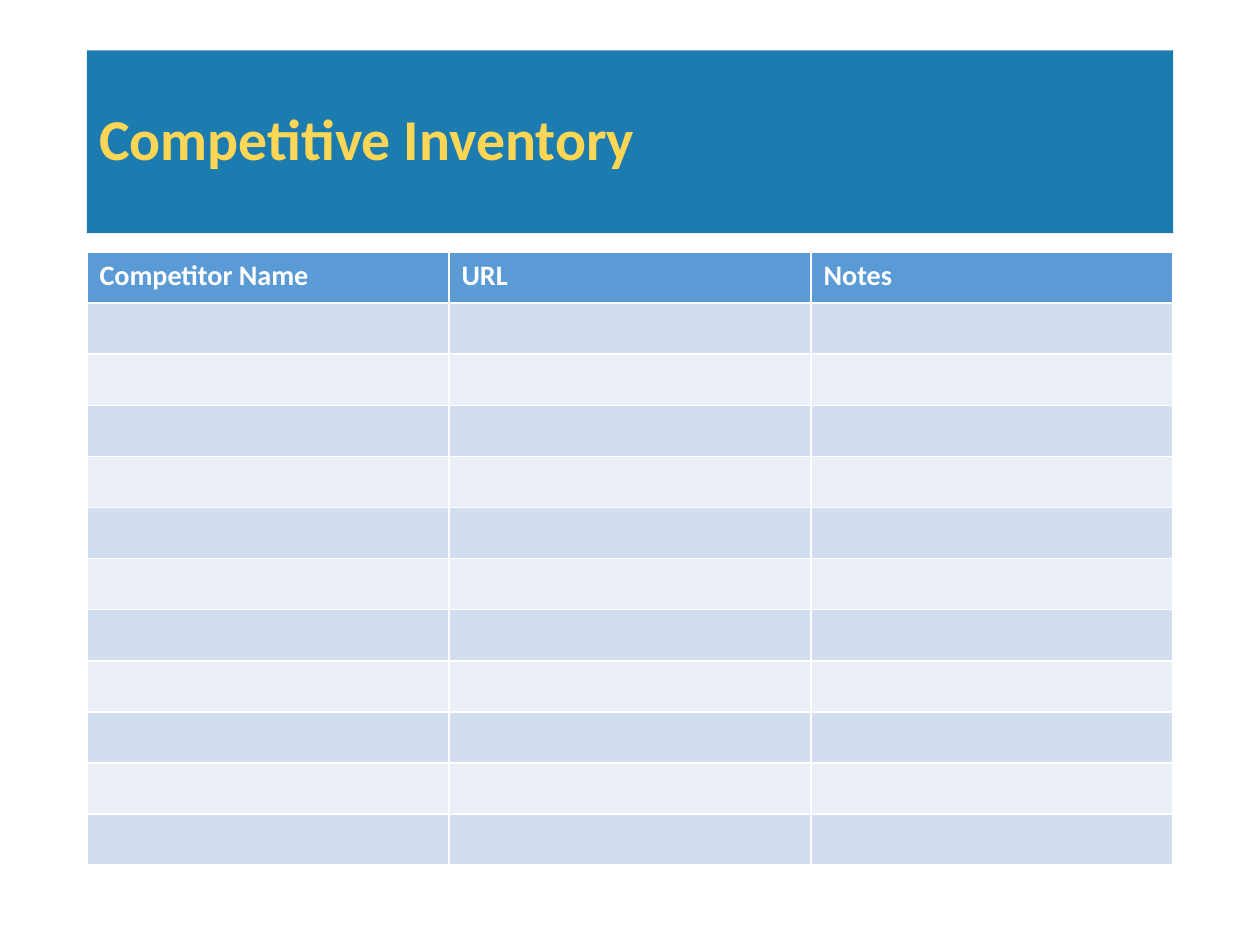
import pptx
import pptx.dml.color
import pptx.enum.shapes
import pptx.enum.text
import pptx.util

Inches = pptx.util.Inches

# Content
TITLE = "Competitive Inventory"
HEADERS = ["Competitor Name", "URL", "Notes"]
EMPTY_ROWS = 11

THEME = {
    "font": "Calibri",
    "title_size": 33,
    "header_size": 16.1,
    "banner": "1C7CB0",
    "title": "FED655",
    "header": "5B9BD5",
    "header_text": "FFFFFF",
    "bands": ["D2DEEF", "EAEFF7"],
}

# Layout in inches
LEFT, WIDTH = 0.69, 8.62
BANNER_TOP, BANNER_HEIGHT = 0.4, 1.45
TABLE_TOP, TABLE_HEIGHT = 2, 4.87


def color(value):
    return pptx.dml.color.RGBColor.from_string(value)


def write_text(frame, text, *, size, text_color, bold=True, line_spacing=1.0):
    paragraph = frame.paragraphs[0]
    paragraph.alignment = pptx.enum.text.PP_ALIGN.LEFT
    paragraph.line_spacing = line_spacing
    run = paragraph.add_run()
    run.text = text
    run.font.name = THEME["font"]
    run.font.size = pptx.util.Pt(size)
    run.font.bold = bold
    run.font.color.rgb = color(text_color)


def add_banner(slide):
    banner = slide.shapes.add_shape(
        pptx.enum.shapes.MSO_SHAPE.RECTANGLE,
        Inches(LEFT), Inches(BANNER_TOP), Inches(WIDTH), Inches(BANNER_HEIGHT))
    banner.shadow.inherit = False
    banner.fill.solid()
    banner.fill.fore_color.rgb = color(THEME["banner"])
    banner.line.fill.background()
    banner.text_frame.word_wrap = True
    banner.text_frame.vertical_anchor = pptx.enum.text.MSO_ANCHOR.MIDDLE
    write_text(banner.text_frame, TITLE, size=THEME["title_size"],
               text_color=THEME["title"], line_spacing=0.9)


def add_inventory_table(slide):
    # The default table style supplies the white rules between cells
    table = slide.shapes.add_table(
        EMPTY_ROWS + 1, len(HEADERS),
        Inches(LEFT), Inches(TABLE_TOP), Inches(WIDTH), Inches(TABLE_HEIGHT)).table
    for row_index, row in enumerate(table.rows):
        is_header = row_index == 0
        fill = THEME["header"] if is_header else THEME["bands"][(row_index - 1) % 2]
        for cell, header in zip(row.cells, HEADERS):
            cell.fill.solid()
            cell.fill.fore_color.rgb = color(fill)
            if is_header:
                write_text(cell.text_frame, header, size=THEME["header_size"],
                           text_color=THEME["header_text"])


def main():
    presentation = pptx.Presentation()
    presentation.slide_width = Inches(10)
    presentation.slide_height = Inches(7.5)
    slide = presentation.slides.add_slide(presentation.slide_layouts[6])
    add_banner(slide)
    add_inventory_table(slide)
    presentation.save("out.pptx")


if __name__ == "__main__":
    main()
